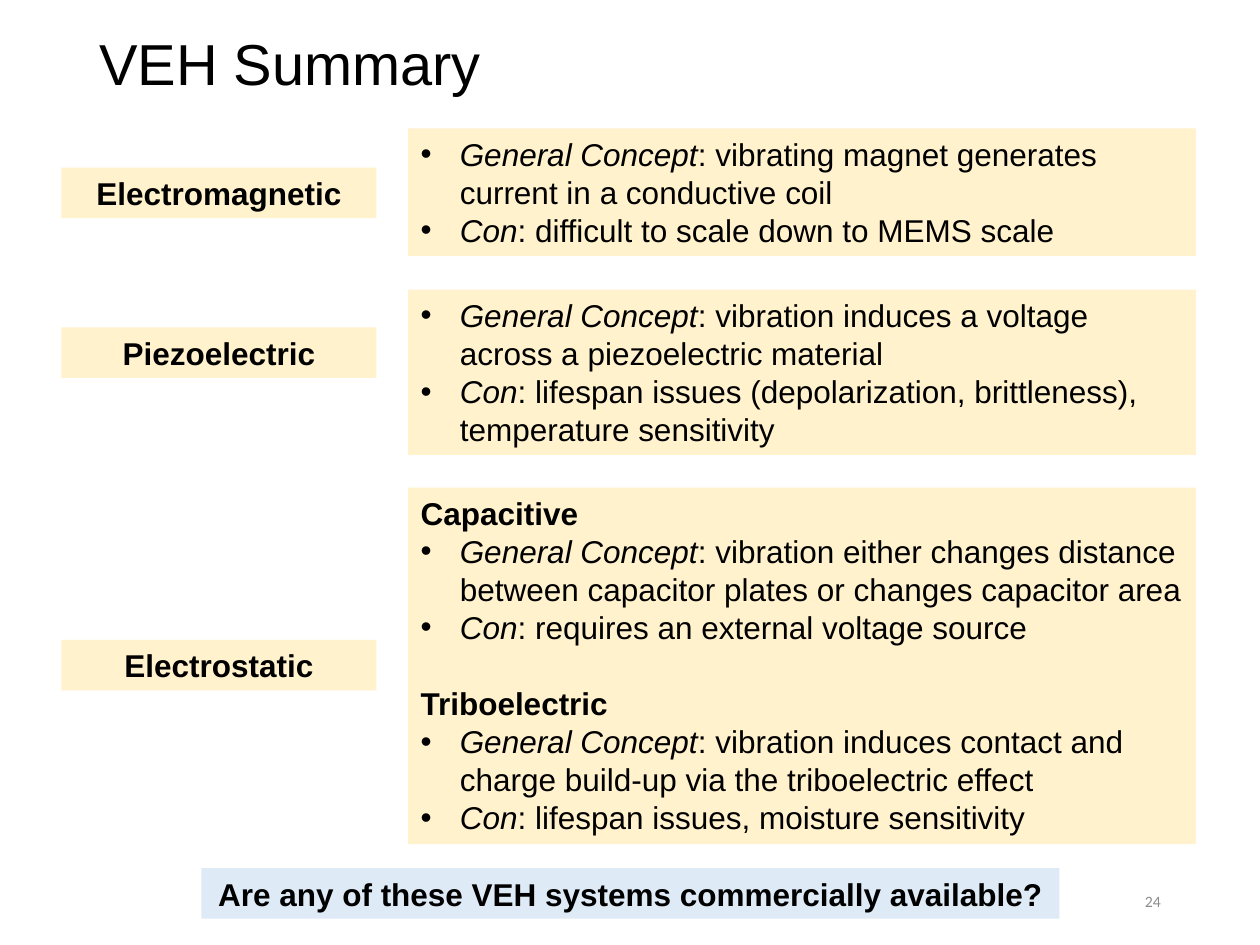
"""Build the VEH summary slide."""
import dataclasses
import typing

import pptx
import pptx.dml.color
import pptx.enum.shapes
import pptx.enum.text
import pptx.oxml.ns
import pptx.util
from lxml import etree

Cm = pptx.util.Cm
Pt = pptx.util.Pt
Align = pptx.enum.text.PP_ALIGN
Anchor = pptx.enum.text.MSO_ANCHOR


@dataclasses.dataclass(frozen=True)
class Theme:
    """Hold colours, fonts and type sizes."""

    ink: str = "000000"
    gray: str = "8C8C8C"
    cream: str = "FFF2CC"
    blue: str = "DEEBF7"
    font: str = "Arial"
    small: str = "Calibri"
    title: int = 33
    body: int = 18
    number: int = 9
    pitch: float = 21.75


class Box(typing.NamedTuple):
    """Give a place in centimetres."""

    left: float
    top: float
    width: float
    height: float


class Topic(typing.NamedTuple):
    """Give a concept and its drawback, with an optional heading."""

    concept: str
    con: str
    head: str = ""


class Row(typing.NamedTuple):
    """Give one harvester type with its topics."""

    name: str
    mid: float
    top: float
    height: float
    topics: tuple[Topic, ...]


THEME = Theme()
LABEL = 1.02
ROWS = (
    Row("Electromagnetic", 3.89, 2.59, 2.57, (
        Topic("vibrating magnet generates current in a conductive coil",
              "difficult to scale down to MEMS scale"),)),
    Row("Piezoelectric", 7.11, 5.84, 3.33, (
        Topic("vibration induces a voltage across a piezoelectric material",
              "lifespan issues (depolarization, brittleness), temperature sensitivity"),)),
    Row("Electrostatic", 13.41, 9.83, 7.19, (
        Topic("vibration either changes distance between capacitor plates or changes capacitor area",
              "requires an external voltage source", "Capacitive"),
        Topic("vibration induces contact and charge build-up via the triboelectric effect",
              "lifespan issues, moisture sensitivity", "Triboelectric"))),
)


def paint(run, size: int, color: str = THEME.ink, font: str = THEME.font) -> None:
    """Set the look of a run."""
    run.font.size = Pt(size)
    run.font.name = font
    run.font.color.rgb = pptx.dml.color.RGBColor.from_string(color)


def panel(slide, box: Box, fill: str):
    """Draw a plain filled box and return its text frame."""
    shape = slide.shapes.add_shape(
        pptx.enum.shapes.MSO_SHAPE.RECTANGLE, *map(Cm, box))
    shape.shadow.inherit = False
    shape.fill.solid()
    shape.fill.fore_color.rgb = pptx.dml.color.RGBColor.from_string(fill)
    shape.line.fill.background()
    frame = shape.text_frame
    frame.word_wrap = True
    frame.vertical_anchor = Anchor.TOP
    return frame


def label(slide, box: Box, text: str, fill: str, wrap: bool = True) -> None:
    """Draw a box with a bold centred line."""
    frame = panel(slide, box, fill)
    frame.word_wrap = wrap
    frame.text = text
    para = frame.paragraphs[0]
    para.alignment = Align.CENTER
    para.line_spacing = Pt(THEME.pitch)
    paint(para.runs[0], THEME.body)
    para.runs[0].font.bold = True


def bullet(para) -> None:
    """Give a paragraph a hanging bullet."""
    props = para._p.get_or_add_pPr()
    indent = Cm(0.79)
    props.set("marL", str(indent))
    props.set("indent", str(-indent))
    font = etree.SubElement(props, pptx.oxml.ns.qn("a:buFont"))
    font.set("typeface", THEME.font)
    mark = etree.SubElement(props, pptx.oxml.ns.qn("a:buChar"))
    mark.set("char", "•")


def detail(slide, box: Box, topics: tuple[Topic, ...]) -> None:
    """Draw a box that lists topics."""
    frame = panel(slide, box, THEME.cream)
    frame.margin_right = Cm(0.2)
    lines = []
    for topic in topics:
        if topic.head:
            lines.append((topic.head, ""))
        lines += [("General Concept", topic.concept), ("Con", topic.con)]
    for index, (lead, rest) in enumerate(lines):
        para = frame.add_paragraph() if index else frame.paragraphs[0]
        para.alignment = Align.LEFT
        para.line_spacing = Pt(THEME.pitch)
        para.text = lead
        if rest:
            bullet(para)
            para.runs[0].font.italic = True
            para.add_run().text = f": {rest}"
        else:
            para.runs[0].font.bold = True
            if index:
                para.space_before = Pt(THEME.pitch)
        for run in para.runs:
            paint(run, THEME.body)


def note(slide, box: Box, text: str, size: int, color: str, font: str, align):
    """Place a line of text and return its paragraph."""
    frame = slide.shapes.add_textbox(*map(Cm, box)).text_frame
    frame.word_wrap = True
    frame.vertical_anchor = Anchor.MIDDLE
    frame.text = text
    para = frame.paragraphs[0]
    para.alignment = align
    paint(para.runs[0], size, color, font)
    return para


def main() -> None:
    """Build and save the slide."""
    deck = pptx.Presentation()
    deck.slide_width, deck.slide_height = Cm(25.4), Cm(19.05)
    slide = deck.slides.add_slide(deck.slide_layouts[6])
    title = note(slide, Box(1.75, 0.08, 21.9, 2.54), "VEH Summary",
                 THEME.title, THEME.ink, THEME.font, Align.LEFT)
    title.line_spacing = 0.9
    note(slide, Box(17.93, 17.65, 5.72, 1.02), "24",
         THEME.number, THEME.gray, THEME.small, Align.RIGHT)
    for row in ROWS:
        label(slide, Box(1.24, row.mid - LABEL / 2, 6.35, LABEL), row.name, THEME.cream)
        detail(slide, Box(8.23, row.top, 15.88, row.height), row.topics)
    label(slide, Box(4.06, 17.5, 17.3, LABEL),
          "Are any of these VEH systems commercially available?", THEME.blue, False)
    deck.save("out.pptx")


if __name__ == "__main__":
    main()
